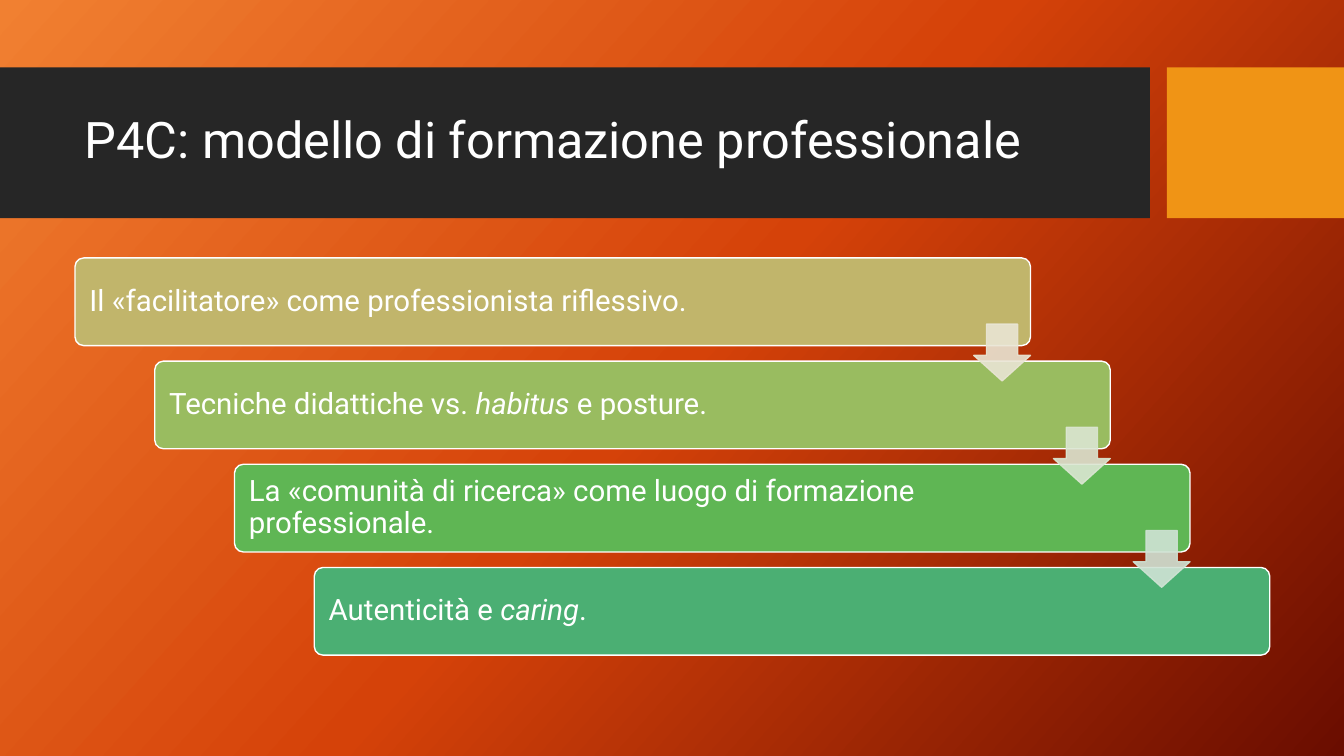
from copy import deepcopy
from dataclasses import dataclass

from lxml.etree import SubElement
from pptx import Presentation
from pptx.dml.color import RGBColor
from pptx.enum.shapes import MSO_SHAPE
from pptx.enum.text import MSO_ANCHOR, MSO_AUTO_SIZE, PP_ALIGN
from pptx.oxml.ns import qn
from pptx.util import Cm, Pt


@dataclass(frozen=True)
class Theme:
    font: str = "Roboto"
    title_size: int = 36
    card_size: int = 21
    text: str = "FFFFFF"
    band: str = "262626"
    accent: str = "F09415"
    background: tuple = ((0, "F18031"), (0.5, "D54209"), (1, "6A0D00"))
    angle: int = 42
    cards: tuple = ("C1B56B", "99BC60", "5FB654", "4BAF73")
    arrows: tuple = ("E9E5D4", "DBE6D2", "D0E3D5")
    arrow_opacity: int = 90


def add_span(para, text, *, font, size, color, italic=False):
    span = para.add_run()
    span.text = text
    span.font.name = font
    span.font.size = Pt(size)
    span.font.italic = italic
    span.font.color.rgb = RGBColor.from_string(color)


class SlideBuilder:
    def __init__(self, slide, theme):
        self.slide = slide
        self.theme = theme

    def background(self):
        fill = self.slide.background.fill
        fill.gradient()
        fill.gradient_angle = 360 - self.theme.angle
        stop_list = self.slide.element.find(".//" + qn("a:gsLst"))
        stop_list.append(deepcopy(stop_list[-1]))
        for stop, (position, color) in zip(fill.gradient_stops, self.theme.background):
            stop.position = position
            stop.color.rgb = RGBColor.from_string(color)

    def shape(self, kind, left, top, width, height, fill, line=None, adjustments=()):
        shape = self.slide.shapes.add_shape(kind, Cm(left), Cm(top), Cm(width), Cm(height))
        shape.shadow.inherit = False
        shape.fill.solid()
        shape.fill.fore_color.rgb = RGBColor.from_string(fill)
        if line:
            shape.line.color.rgb = RGBColor.from_string(line)
            shape.line.width = Pt(1)
        else:
            shape.line.fill.background()
        for index, value in enumerate(adjustments):
            shape.adjustments[index] = value
        return shape

    def fill_text(self, frame, spans, size):
        frame.word_wrap = True
        frame.auto_size = MSO_AUTO_SIZE.NONE
        frame.vertical_anchor = MSO_ANCHOR.MIDDLE
        para = frame.paragraphs[0]
        para.alignment = PP_ALIGN.LEFT
        para.line_spacing = 0.9
        for text, italic in spans:
            add_span(para, text, font=self.theme.font, size=size,
                     color=self.theme.text, italic=italic)

    def title(self, text, left, top, width, height):
        title = self.slide.shapes.title
        title.left, title.top, title.width, title.height = map(Cm, (left, top, width, height))
        self.fill_text(title.text_frame, [(text, False)], self.theme.title_size)
        # Bring the title in front of its band
        self.slide.shapes.element.append(title.element)

    def card(self, spans, left, top, width, height, fill, text_width):
        card = self.shape(MSO_SHAPE.ROUNDED_RECTANGLE, left, top, width, height,
                          fill, self.theme.text, [0.1])
        frame = card.text_frame
        frame.margin_left = Cm(0.3)
        frame.margin_right = Cm(width - text_width - 0.3)
        self.fill_text(frame, spans, self.theme.card_size)

    def arrow(self, left, top, size, color):
        arrow = self.shape(MSO_SHAPE.DOWN_ARROW, left, top, size, size,
                           color, color, [0.55, 0.45])
        # Make fill and outline slightly transparent
        for tone in arrow.element.spPr.iter(qn("a:srgbClr")):
            SubElement(tone, qn("a:alpha"), val=str(self.theme.arrow_opacity * 1000))


def main():
    theme = Theme()
    deck = Presentation()
    deck.slide_width, deck.slide_height = Cm(33.87), Cm(19.05)
    builder = SlideBuilder(deck.slides.add_slide(deck.slide_layouts[5]), theme)

    # Background and title band
    builder.background()
    builder.shape(MSO_SHAPE.RECTANGLE, 0, 1.7, 28.98, 3.8, theme.band)
    builder.shape(MSO_SHAPE.RECTANGLE, 29.41, 1.7, 4.46, 3.8, theme.accent)
    builder.title("P4C: modello di formazione professionale", 1.88, 2.08, 26.7, 3)

    # Staircase of cards
    steps = [
        [("Il «facilitatore» come professionista riflessivo.", False)],
        [("Tecniche didattiche vs. ", False), ("habitus", True), (" e posture.", False)],
        [("La «comunità di ricerca» come luogo di formazione professionale.", False)],
        [("Autenticità e ", False), ("caring", True), (".", False)],
    ]
    width, height, arrow_size = 24.08, 2.21, 1.43
    places = [(1.89 + 2.01 * row, 6.5 + 2.6 * row) for row in range(len(steps))]
    for spans, (left, top), color in zip(steps, places, theme.cards):
        builder.card(spans, left, top, width, height, color, text_width=20.1)

    # Arrows between consecutive cards
    for (left, top), color in zip(places, theme.arrows):
        builder.arrow(left + width - arrow_size, top + 1.67, arrow_size, color)

    deck.save("out.pptx")


if __name__ == "__main__":
    main()
